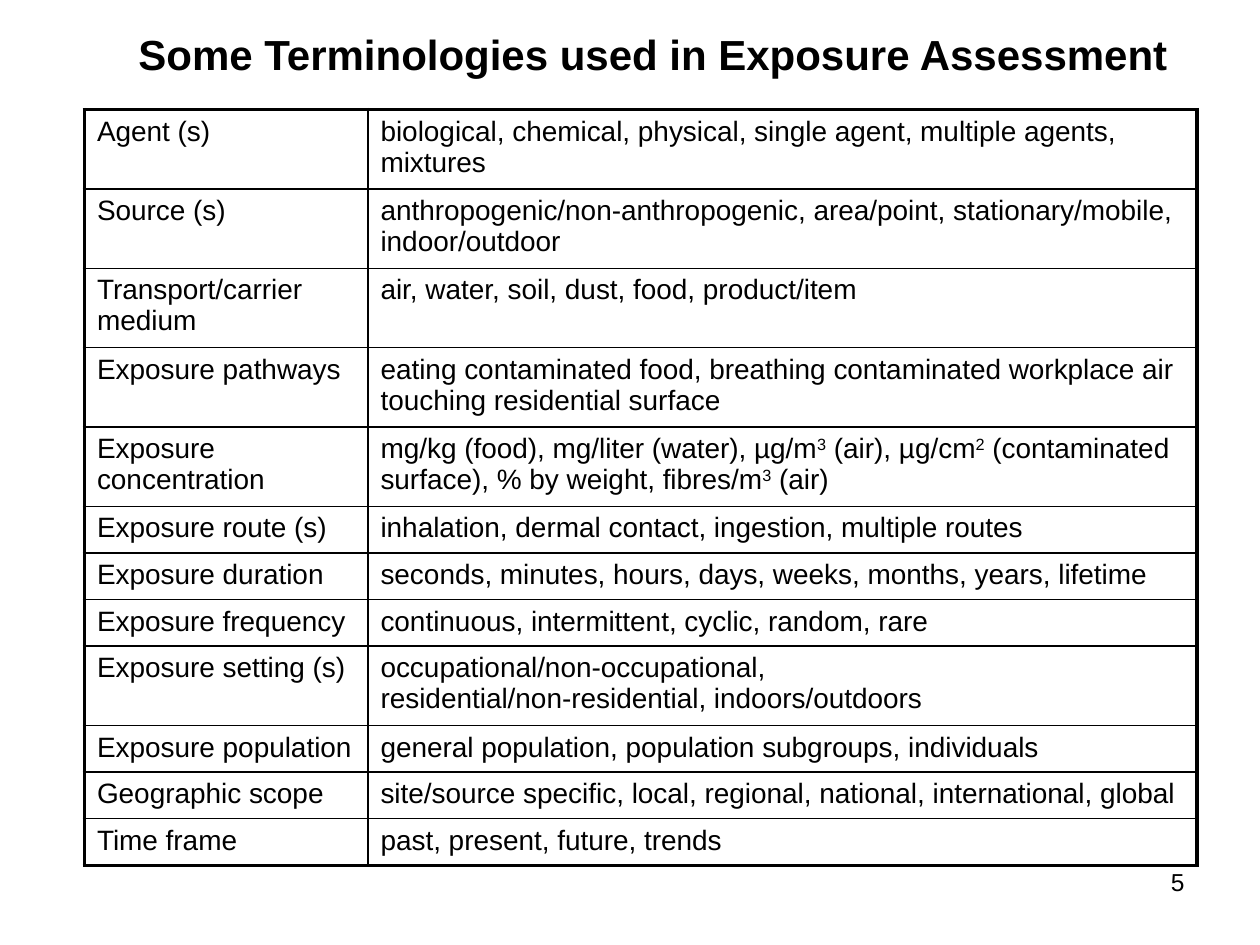
"""Build the slide of terms used in exposure assessment."""
from dataclasses import dataclass
from typing import Any

from lxml import etree
from pptx import Presentation
from pptx import util as u
from pptx.dml.color import RGBColor
from pptx.enum import text
from pptx.oxml import ns


@dataclass(frozen=True)
class Theme:
    font: str = "Arial"
    ink: str = "000000"
    title: int = 24
    body: int = 16
    number: int = 14
    frame: float = 2.25
    rule: float = 1


@dataclass(frozen=True)
class Term:
    name: str
    examples: str
    lines: int = 1


@dataclass(frozen=True)
class Label:
    words: str
    left: float
    top: float
    width: float
    height: float
    size: int
    bold: bool = False
    wrap: bool = True
    align: Any = text.PP_ALIGN.LEFT


THEME = Theme()
COLUMNS = (2.25, 6.58)
ROW_HEIGHTS = {1: 0.37, 2: 0.63}
TERMS = (
    Term("Agent (s)", "biological, chemical, physical, single agent, multiple agents, mixtures", 2),
    Term("Source (s)", "anthropogenic/non-anthropogenic, area/point, stationary/mobile, indoor/outdoor", 2),
    Term("Transport/carrier medium", "air, water, soil, dust, food, product/item", 2),
    Term("Exposure pathways",
         "eating contaminated food, breathing contaminated workplace air touching residential surface", 2),
    Term("Exposure concentration",
         "mg/kg (food), mg/liter (water), µg/m^3^ (air), µg/cm^2^ (contaminated surface), "
         "% by weight, fibres/m^3^ (air)", 2),
    Term("Exposure route (s)", "inhalation, dermal contact, ingestion, multiple routes"),
    Term("Exposure duration", "seconds, minutes, hours, days, weeks, months, years, lifetime"),
    Term("Exposure frequency", "continuous, intermittent, cyclic, random, rare"),
    Term("Exposure setting (s)",
         "occupational/non-occupational,\nresidential/non-residential, indoors/outdoors", 2),
    Term("Exposure population", "general population, population subgroups, individuals"),
    Term("Geographic scope", "site/source specific, local, regional, national, international, global"),
    Term("Time frame", "past, present, future, trends"),
)
LABELS = (
    Label("5", 7.17, 6.83, 2.33, 0.52, THEME.number, align=text.PP_ALIGN.RIGHT),
    Label("Some Terminologies used in Exposure Assessment", 1, 0.18, 8.45, 0.5,
          THEME.title, bold=True, wrap=False),
)


def add_run(p: Any, words: str, size: int, bold: bool = False, raised: bool = False) -> None:
    """Add one styled run, raised when it is a superscript."""
    r = p.add_run()
    r.text = words
    r.font.name, r.font.size, r.font.bold = THEME.font, u.Pt(size), bold
    r.font.color.rgb = RGBColor.from_string(THEME.ink)
    if raised:
        r.font._element.set("baseline", "30000")


def add_words(p: Any, words: str, size: int) -> None:
    """Write words where ^ encloses superscripts and a newline breaks the line."""
    for i, line in enumerate(words.split("\n")):
        if i:
            p.add_line_break()
        for j, part in enumerate(line.split("^")):
            add_run(p, part, size, raised=j % 2 == 1)


def set_borders(cell: Any, widths: dict[str, float]) -> None:
    """Give each side of a cell a solid line of its width in points."""
    props = cell._tc.get_or_add_tcPr()
    for side, width in widths.items():
        line = etree.SubElement(props, ns.qn(f"a:ln{side}"), w=str(u.Pt(width)))
        fill = etree.SubElement(line, ns.qn("a:solidFill"))
        etree.SubElement(fill, ns.qn("a:srgbClr"), val=THEME.ink)


def add_terms(s: Any, left: float, top: float) -> None:
    """Draw the table of terms with a heavy frame and thin inner rules."""
    heights = [ROW_HEIGHTS[term.lines] for term in TERMS]
    table = s.shapes.add_table(len(TERMS), len(COLUMNS), u.Inches(left), u.Inches(top),
                               u.Inches(sum(COLUMNS)), u.Inches(sum(heights))).table
    table.first_row = table.horz_banding = False
    for column, width in zip(table.columns, COLUMNS):
        column.width = u.Inches(width)
    for i, (term, height) in enumerate(zip(TERMS, heights)):
        table.rows[i].height = u.Inches(height)
        for j, words in enumerate((term.name, term.examples)):
            cell = table.cell(i, j)
            outer = {"L": j == 0, "R": j == len(COLUMNS) - 1,
                     "T": i == 0, "B": i == len(TERMS) - 1}
            set_borders(cell, {side: THEME.frame if edge else THEME.rule
                               for side, edge in outer.items()})
            cell.fill.background()
            add_words(cell.text_frame.paragraphs[0], words, THEME.body)


def add_label(s: Any, label: Label) -> None:
    """Draw a text box with a single run."""
    sp = s.shapes.add_textbox(u.Inches(label.left), u.Inches(label.top),
                              u.Inches(label.width), u.Inches(label.height))
    tf = sp.text_frame
    tf.word_wrap = label.wrap
    p = tf.paragraphs[0]
    p.alignment = label.align
    add_run(p, label.words, label.size, label.bold)


def main() -> None:
    """Build and save the slide."""
    prs = Presentation()
    prs.slide_width, prs.slide_height = u.Inches(10), u.Inches(7.5)
    s = prs.slides.add_slide(prs.slide_layouts[6])
    add_terms(s, 0.67, 0.87)
    for label in LABELS:
        add_label(s, label)
    prs.save("out.pptx")


if __name__ == "__main__":
    main()
